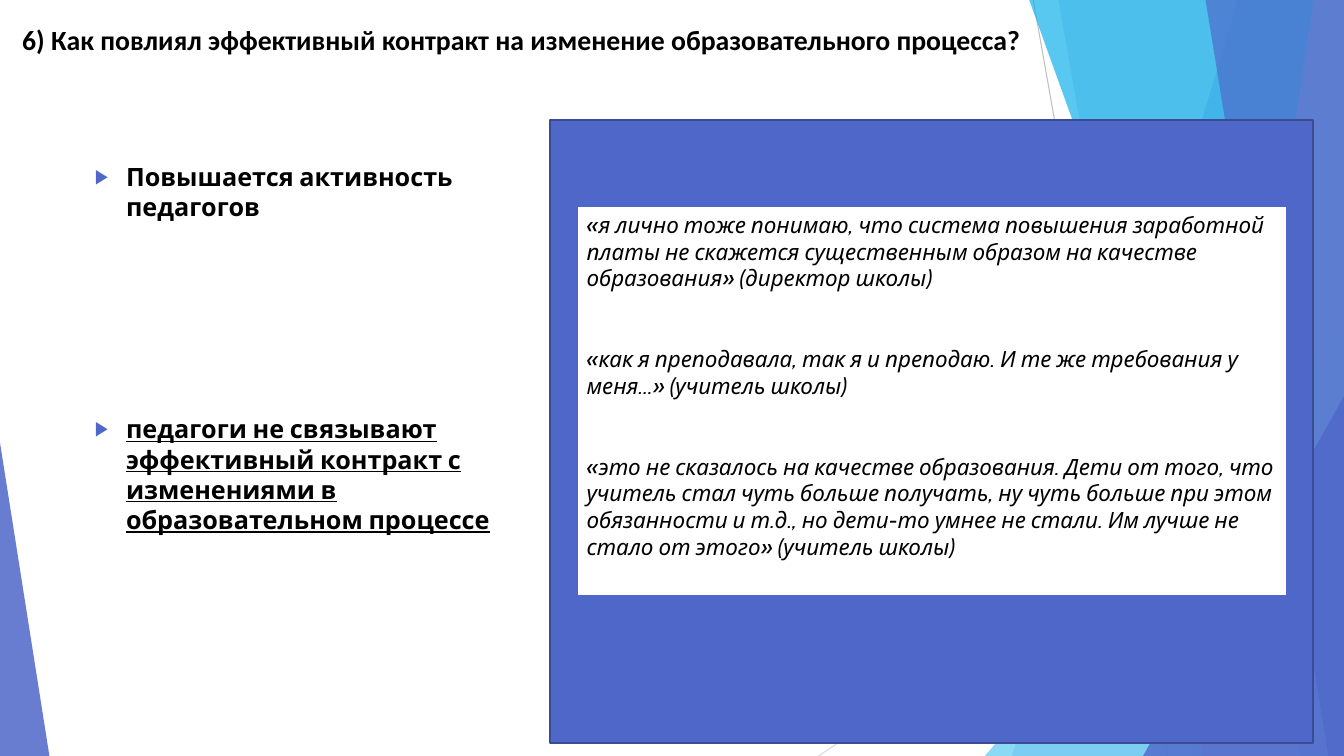
from lxml.etree import SubElement
from pptx import Presentation
from pptx.dml.color import RGBColor
from pptx.enum.shapes import MSO_CONNECTOR, MSO_SHAPE
from pptx.enum.text import MSO_ANCHOR, MSO_AUTO_SIZE, PP_ALIGN
from pptx.oxml.ns import qn
from pptx.util import Inches, Pt

W, H = Inches(13.333), Inches(7.5)
COL, ROW = W / 100, H / 100
PANEL_GRID = 29
BLUE = "4E67C8"

TITLE = "6) Как повлиял эффективный контракт на изменение образовательного процесса?"
FINDINGS = [
    ("Повышается активность педагогов", 0, False),
    ("педагоги не связывают эффективный контракт с изменениями в образовательном процессе", 137, True),
]
QUOTES = [
    "«я лично тоже понимаю, что система повышения заработной платы не скажется существенным образом "
    "на качестве образования» (директор школы)",
    "«как я преподавала, так я и преподаю. И те же требования у меня…» (учитель школы)",
    "«это не сказалось на качестве образования. Дети от того, что учитель стал чуть больше получать, "
    "ну чуть больше при этом обязанности и т.д., но дети-то умнее не стали. Им лучше не стало "
    "от этого» (учитель школы)",
]
RAYS = [(76.88, 0, 86.85, 100, "BFBFBF"), (100, 53.73, 60.9, 100, "D9D9D9")]
BACK_RIBBONS = [(92.1, 75.3, BLUE, 30), (78.75, 88.73, BLUE, 20)]
FRONT_RIBBONS = [(76.58, 96.83, "12B2EB", 70), (97.73, 89.4, "95A4DE", 70), (89.7, 98.85, BLUE, 65)]


def color(value):
    return RGBColor.from_string(value)


def grid_box(left, top, width, height):
    return round(left * COL), round(top * ROW), round(width * COL), round(height * ROW)


def place(sp, box):
    sp.left, sp.top, sp.width, sp.height = box


def paint(sp, fill, alpha=None, line=None):
    sp.shadow.inherit = False
    sp.fill.solid()
    sp.fill.fore_color.rgb = color(fill)
    if alpha:
        rgb = sp._element.spPr.find(qn("a:solidFill")).find(qn("a:srgbClr"))
        SubElement(rgb, qn("a:alpha"), val=str(alpha * 1000))
    if line:
        sp.line.color.rgb = color(line)
        sp.line.width = Pt(1.5)
    else:
        sp.line.fill.background()


def style(p, font, size, bold=False, italic=False, underline=None):
    for r in p.runs:
        r.font.name, r.font.size = font, Pt(size)
        r.font.bold, r.font.italic, r.font.underline = bold, italic, underline
        r.font.color.rgb = color("000000")


def setup_frame(tf):
    tf.word_wrap = True
    tf.auto_size = MSO_AUTO_SIZE.NONE
    tf.vertical_anchor = MSO_ANCHOR.TOP


def add_bullet(p):
    pPr = p._p.get_or_add_pPr()
    pPr.set("marL", str(Inches(0.81)))
    pPr.set("indent", str(Inches(-0.31)))
    SubElement(SubElement(pPr, qn("a:buClr")), qn("a:srgbClr"), val=BLUE)
    SubElement(pPr, qn("a:buSzPct"), val="80000")
    SubElement(pPr, qn("a:buFont"), typeface="Arial")
    SubElement(pPr, qn("a:buChar"), char="▶")


def add_ray(shapes, x1, y1, x2, y2, line):
    start = round(x1 * COL), round(y1 * ROW)
    end = round(x2 * COL), round(y2 * ROW)
    ray = shapes.add_connector(MSO_CONNECTOR.STRAIGHT, *start, *end)
    ray.line.color.rgb = color(line)
    ray.line.width = Pt(0.75)
    SubElement(ray._element.spPr, qn("a:effectLst"))


def add_ribbon(shapes, top_x, bottom_x, fill, alpha):
    builder = shapes.build_freeform(round(top_x * COL), 0)
    builder.add_line_segments([(W, 0), (W, H), (round(bottom_x * COL), H)], close=True)
    paint(builder.convert_to_shape(), fill, alpha)


def add_corner(shapes, box, apex, fill, alpha):
    sp = shapes.add_shape(MSO_SHAPE.ISOSCELES_TRIANGLE, *box)
    sp.adjustments[0] = apex
    paint(sp, fill, alpha)


def draw_backdrop(s):
    group = s.shapes.add_group_shape()
    s.shapes._spTree.insert(2, group._element)
    shapes = group.shapes
    for ray in RAYS:
        add_ray(shapes, *ray)
    for ribbon in BACK_RIBBONS:
        add_ribbon(shapes, *ribbon)
    add_corner(shapes, grid_box(73.28, 44.4, 26.72, 55.6), 1, "5ECCF3", 72)
    for ribbon in FRONT_RIBBONS:
        add_ribbon(shapes, *ribbon)
    add_corner(shapes, grid_box(85.05, 52.4, 14.95, 47.6), 1, BLUE, 80)
    add_corner(shapes, grid_box(0, 58.53, 3.68, 41.47), 0, BLUE, 85)


def fill_title(s, box):
    title = s.shapes.title
    place(title, box)
    tf = title.text_frame
    setup_frame(tf)
    tf.text = TITLE
    p = tf.paragraphs[0]
    p.alignment = PP_ALIGN.LEFT
    style(p, "Calibri", 19.8, bold=True)


def fill_findings(s, box):
    body = s.placeholders[1]
    place(body, box)
    tf = body.text_frame
    setup_frame(tf)
    for i, (text, gap, underline) in enumerate(FINDINGS):
        p = tf.add_paragraph() if i else tf.paragraphs[0]
        p.text = text
        add_bullet(p)
        p.space_before = Pt(gap)
        style(p, "Cabin", 18, bold=True, underline=underline)


def draw_quotes(s, box):
    left, top, width, height = box
    panel = s.shapes.add_shape(MSO_SHAPE.RECTANGLE, *box)
    paint(panel, BLUE, line="3A4C94")
    col, row = width / PANEL_GRID, height / PANEL_GRID
    card = s.shapes.add_shape(MSO_SHAPE.RECTANGLE, round(left + col), round(top + 4 * row),
                              round(27 * col), round(18.16 * row))
    paint(card, "FFFFFF", line=BLUE)
    tf = card.text_frame
    setup_frame(tf)
    for i, quote in enumerate(QUOTES):
        p = tf.add_paragraph() if i else tf.paragraphs[0]
        p.text = quote
        p.alignment = PP_ALIGN.LEFT
        p.space_before = Pt(38.4 if i else 0)
        style(p, "Cabin", 16, italic=True)


def main():
    prs = Presentation()
    prs.slide_width, prs.slide_height = W, H
    s = prs.slides.add_slide(prs.slide_layouts[1])
    draw_backdrop(s)
    fill_title(s, grid_box(0.9, 2.4, 96.53, 9.73))
    fill_findings(s, grid_box(2.55, 20.67, 35.48, 67.6))
    draw_quotes(s, grid_box(40.95, 15.87, 56.78, 82.4))
    prs.save("out.pptx")


if __name__ == "__main__":
    main()
